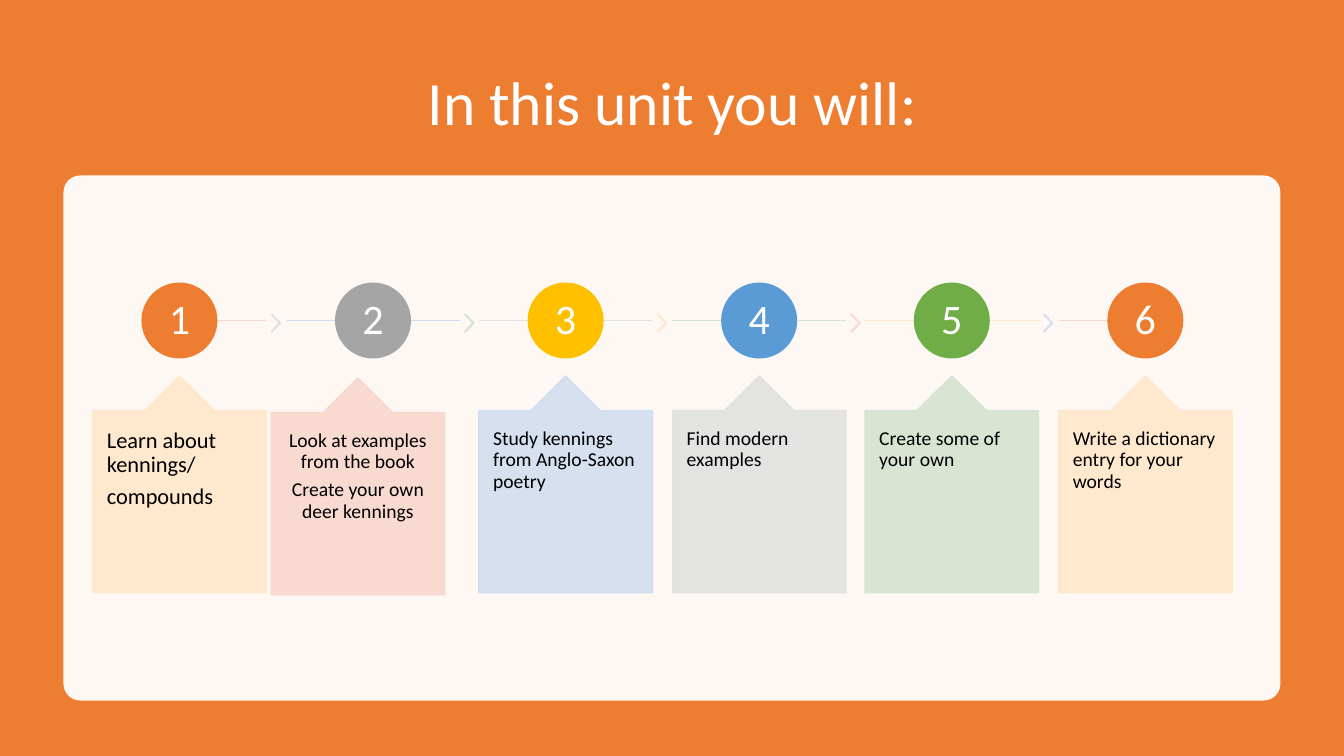
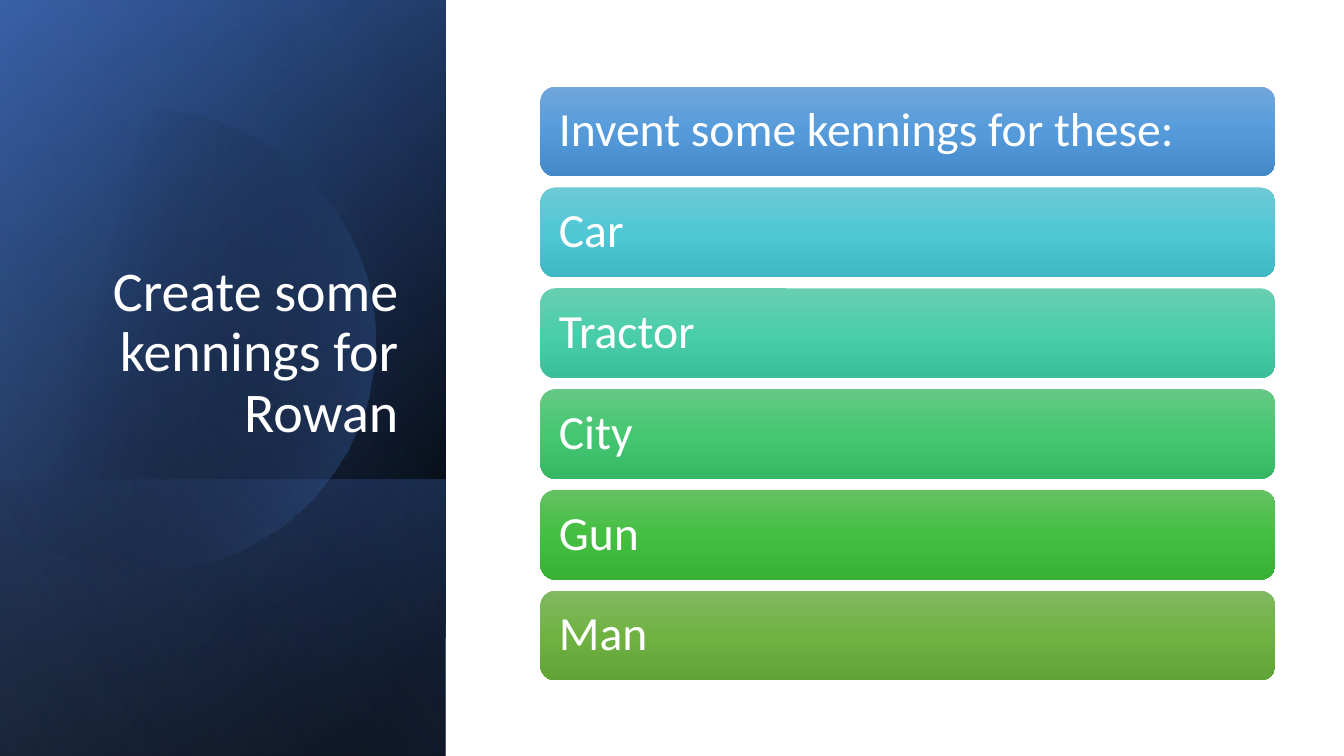
from dataclasses import dataclass
from math import acos, cos, sin

from lxml import etree
from pptx import Presentation
from pptx.dml.color import RGBColor
from pptx.enum.shapes import MSO_CONNECTOR, MSO_SHAPE
from pptx.enum.text import MSO_ANCHOR, MSO_AUTO_SIZE, PP_ALIGN
from pptx.oxml.ns import qn
from pptx.util import Pt

PX = 9144  # 100 px to the inch
RECT, ROUNDED, OVAL = MSO_SHAPE.RECTANGLE, MSO_SHAPE.ROUNDED_RECTANGLE, MSO_SHAPE.OVAL
CHEVRON, CALLOUT = MSO_SHAPE.CHEVRON, MSO_SHAPE.UP_ARROW_CALLOUT
STRAIGHT = MSO_CONNECTOR.STRAIGHT
LEFT, CENTER, RIGHT = PP_ALIGN.LEFT, PP_ALIGN.CENTER, PP_ALIGN.RIGHT
TOP, MIDDLE, BOTTOM = MSO_ANCHOR.TOP, MSO_ANCHOR.MIDDLE, MSO_ANCHOR.BOTTOM
NO_FIT = MSO_AUTO_SIZE.NONE


@dataclass(frozen=True)
class Theme:
    font: str = "Calibri"
    white: str = "FFFFFF"
    black: str = "000000"
    orange: str = "ED7D31"
    grey: str = "A5A5A5"
    gold: str = "FFC000"
    blue: str = "5B9BD5"
    green: str = "70AD47"
    pale_orange: str = "FFE8CC"
    pale_red: str = "F8D7CE"
    pale_blue: str = "D2DEEF"
    pale_grey: str = "E1E1E1"
    pale_green: str = "D5E3CF"
    navy: str = "2F5597"
    royal: str = "4472C4"
    sky: str = "8FAADC"
    title: int = 44
    side_title: int = 40
    card: int = 34
    number: int = 30
    large: int = 16
    body: int = 14


THEME = Theme()


def paint(shape, stops, angle=None, outlined=False):
    """Fill with (position, colour, opacity) stops; a single stop gives a solid fill."""
    shape.shadow.inherit = False
    if angle is None:
        shape.fill.solid()
        shape.fill.fore_color.rgb = RGBColor.from_string(stops[0][1])
        holders = [shape._element.spPr.find(qn("a:solidFill"))]
        holders[0].clear()
    else:
        shape.fill.gradient()
        shape.fill.gradient_angle = 360 - angle
        stop_list = shape._element.spPr.find(qn("a:gradFill")).find(qn("a:gsLst"))
        stop_list.clear()
        holders = [etree.SubElement(stop_list, qn("a:gs"), pos=str(position * 1000))
                   for position, _, _ in stops]
    for holder, (_, colour, opacity) in zip(holders, stops):
        tint = etree.SubElement(holder, qn("a:srgbClr"), val=colour)
        if opacity < 100:
            etree.SubElement(tint, qn("a:alpha"), val=str(opacity * 1000))
    if outlined:
        shape.line.color.rgb = RGBColor.from_string(stops[0][1])
        shape.line.width = Pt(1)
    else:
        shape.line.fill.background()


def write(shape, text, *, size, colour=THEME.white, align=LEFT, anchor=MIDDLE,
          inset=(10, 5), gap=0.35):
    frame = shape.text_frame
    frame.text = text
    frame.word_wrap = True
    frame.auto_size = NO_FIT
    frame.vertical_anchor = anchor
    frame.margin_left = frame.margin_right = inset[0] * PX
    frame.margin_top = frame.margin_bottom = inset[1] * PX
    for para in frame.paragraphs:
        para.alignment = align
        para.line_spacing = 0.9
        para.space_before = Pt(0)
        para.space_after = Pt(size * gap)
        for span in para.runs:
            span.font.name = THEME.font
            span.font.size = Pt(size)
            span.font.color.rgb = RGBColor.from_string(colour)


deck = Presentation()
deck.slide_width, deck.slide_height = 1333 * PX, 750 * PX
title_only = deck.slide_layouts[5]
unit_page, task_page = (deck.slides.add_slide(title_only) for _ in range(2))

# Unit overview: backdrop and rounded panel
for kind, box, colour, opacity in (
    (RECT, (0, 0, 1333, 750), THEME.orange, 100),
    (ROUNDED, (63, 174, 1207, 521), THEME.white, 95),
):
    backdrop = unit_page.shapes.add_shape(kind, *(value * PX for value in box))
    paint(backdrop, [(0, colour, opacity)])
backdrop.adjustments[0] = 0.032

# Six steps: text, circle, callout, line, chevron, type size, alignment, callout shift
steps = (
    ("Learn about kennings/\ncompounds", THEME.orange, THEME.pale_orange,
     THEME.pale_red, THEME.pale_grey, THEME.large, LEFT, (0, 0)),
    ("Look at examples from the book\nCreate your own deer kennings", THEME.grey, THEME.pale_red,
     THEME.pale_blue, THEME.pale_green, THEME.body, CENTER, (-15, 2)),
    ("Study kennings from Anglo-Saxon poetry", THEME.gold, THEME.pale_blue,
     THEME.pale_grey, THEME.pale_orange, THEME.body, LEFT, (0, 0)),
    ("Find modern examples", THEME.blue, THEME.pale_grey,
     THEME.pale_green, THEME.pale_red, THEME.body, LEFT, (0, 0)),
    ("Create some of your own", THEME.green, THEME.pale_green,
     THEME.pale_orange, THEME.pale_blue, THEME.body, LEFT, (0, 0)),
    ("Write a dictionary entry for your words", THEME.orange, THEME.pale_orange,
     THEME.pale_red, None, THEME.body, LEFT, (0, 0)),
)
for index, (text, strong, pale, line_colour, chevron_colour, size, align, shift) in enumerate(steps):
    left = round(92 + 191.6 * index)
    line_start = left + (96 if index == 0 else 0)
    line_end = left + (86 if index == len(steps) - 1 else 172)
    line = unit_page.shapes.add_connector(
        STRAIGHT, line_start * PX, 318 * PX, line_end * PX, 318 * PX)
    line.line.color.rgb = RGBColor.from_string(line_colour)
    line.line.width = Pt(1)
    etree.SubElement(line._element.spPr, qn("a:effectLst"))

    parts = {}
    for kind, box, colour, opacity in (
        (CHEVRON, (left + 177, 312, 9, 17), chevron_colour, 90),
        (OVAL, (left + 49, 281, 74, 74), strong, 100),
        (CALLOUT, (left + shift[0], 373 + shift[1], 172, 215), pale, 90),
    ):
        if colour:
            parts[kind] = unit_page.shapes.add_shape(kind, *(value * PX for value in box))
            paint(parts[kind], [(0, colour, opacity)], outlined=True)
    if CHEVRON in parts:
        parts[CHEVRON].adjustments[0] = 0.9
    for position, value in enumerate((0.5, 0.2, 0.2, 1)):
        parts[CALLOUT].adjustments[position] = value
    write(parts[OVAL], str(index + 1), size=THEME.number, align=CENTER, inset=(3, 3), gap=0)
    write(parts[CALLOUT], text, size=size, colour=THEME.black, align=align, anchor=TOP,
          inset=(14, 18))

# Kennings task: layered gradients of the side panel, turned a quarter
full_panel = (-154, 154, 750, 442)
panel_layers = (
    (full_panel, [(8, THEME.black, 100), (100, THEME.navy, 100)], 50),
    (full_panel, [(0, THEME.black, 0), (99, THEME.royal, 46)], 30),
    ((84, 392, 274, 442), [(2, THEME.royal, 29), (100, THEME.black, 30)], 130),
    (None, [(29, THEME.black, 0), (100, THEME.royal, 43)], 14),
    (full_panel, [(0, THEME.black, 0), (99, THEME.sky, 11)], 120),
)
# The disc is cut off by the left edge of the slide
center_x, center_y, radius, arc_steps = 143, 338, 229, 90
half_arc = acos(-center_x / radius)
angles = [half_arc * (2 * step / arc_steps - 1) for step in range(arc_steps + 1)]
disc_points = [(center_x + radius * cos(turn), center_y + radius * sin(turn)) for turn in angles]

for box, stops, angle in panel_layers:
    if box:
        layer = task_page.shapes.add_shape(RECT, *(value * PX for value in box))
        layer.rotation = 90
        layer._element.spPr.find(qn("a:xfrm")).set("flipH", "1")
    else:
        outline = task_page.shapes.build_freeform(*disc_points[0], scale=PX)
        outline.add_line_segments(disc_points[1:], close=True)
        layer = outline.convert_to_shape()
    paint(layer, stops, angle)

cards = (
    ("Invent some kennings for these:", "71A6DB", "559BDB", "448ACA"),
    ("Car", "6DCAD5", "4FC7D5", "3FB7C4"),
    ("Tractor", "69CFB1", "4ACEAA", "3BBE9A"),
    ("City", "66C885", "45C772", "37B764"),
    ("Gun", "64C162", "44BF41", "37B034"),
    ("Man", "81B861", "6FB242", "62A336"),
)
for index, (text, *shades) in enumerate(cards):
    card = task_page.shapes.add_shape(
        ROUNDED, 536 * PX, (86 + 100 * index) * PX, 729 * PX, 89 * PX)
    paint(card, [(50 * step, shade, 100) for step, shade in enumerate(shades)], 90)
    write(card, text, size=THEME.card, inset=(14, 14), gap=0)

# Titles, raised above the backdrops
for page, text, box, size, align, anchor in (
    (unit_page, "In this unit you will:", (92, 50, 1150, 110), THEME.title, CENTER, MIDDLE),
    (task_page, "Create some kennings for Rowan", (64, 184, 341, 262),
     THEME.side_title, RIGHT, BOTTOM),
):
    title = page.shapes.title
    title.left, title.top, title.width, title.height = (value * PX for value in box)
    write(title, text, size=size, align=align, anchor=anchor, gap=0)
    page.shapes._spTree.append(title._element)

deck.save("out.pptx")
